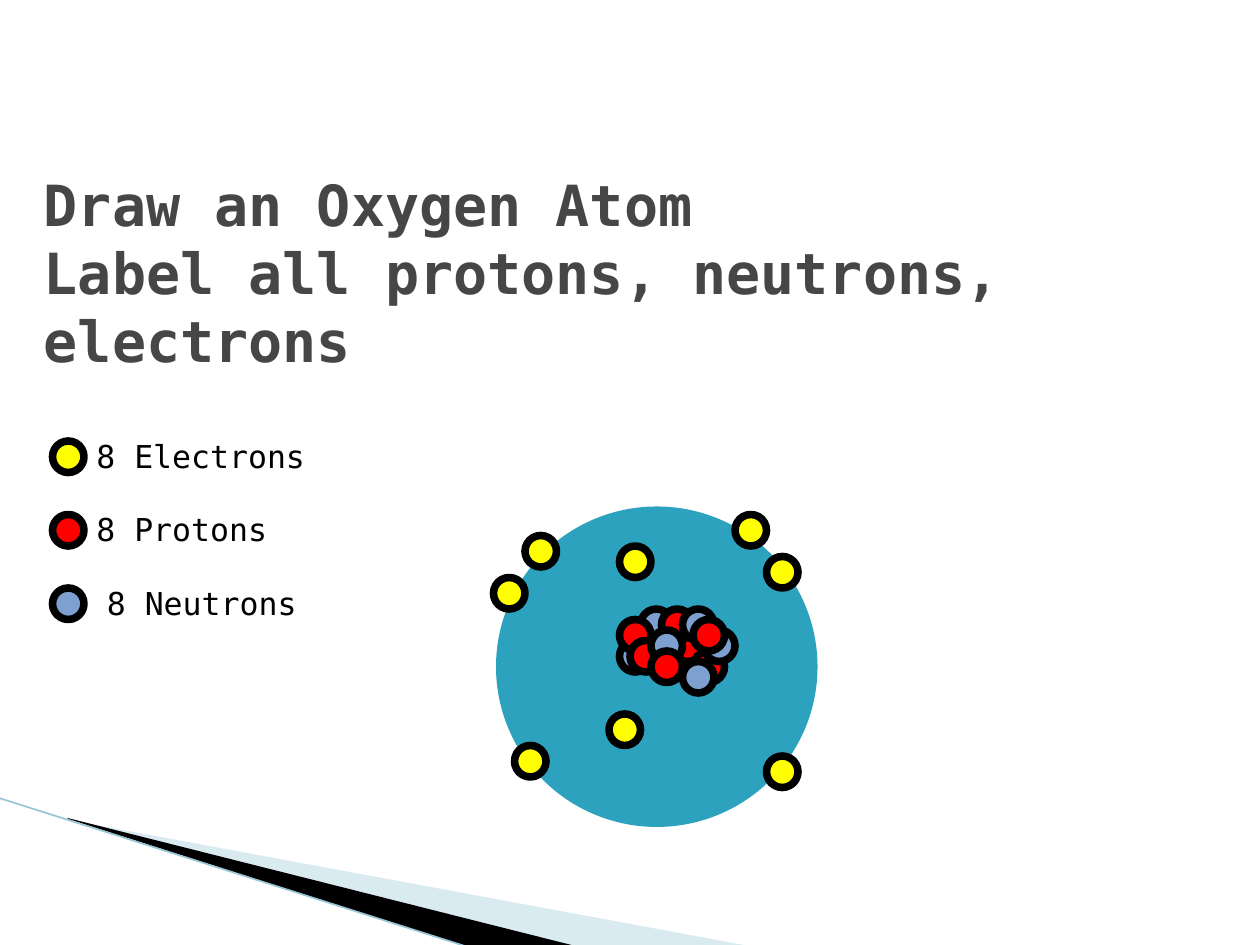
"""Build a slide that shows an oxygen atom with its protons, neutrons and electrons."""
from typing import NamedTuple

from lxml import etree
from pptx import Presentation
from pptx import util as u
from pptx.dml.color import RGBColor
from pptx.enum import shapes, text
from pptx.oxml.ns import qn

PX = u.Inches(1) // 120
FONT = "DejaVu Sans Mono"
DIAMETER = 30
OUTLINE = 4.33
BLACK, GREY, TEAL, PALE = "000000", "464646", "2DA2BF", "A0CBDC"
ELECTRON, PROTON, NEUTRON = "FFFF00", "FF0000", "7DA0D0"


class Particle(NamedTuple):
    kind: str
    left: int
    top: int


class Entry(NamedTuple):
    kind: str
    label: str
    dot_top: int
    label_left: int


class Wedge(NamedTuple):
    color: str
    opacity: int
    points: list[tuple[int, int]]


NUCLEUS = [
    Particle(NEUTRON, 590, 610), Particle(NEUTRON, 610, 580),
    Particle(PROTON, 640, 600), Particle(PROTON, 630, 580),
    Particle(PROTON, 590, 590), Particle(PROTON, 660, 620),
    Particle(PROTON, 600, 610), Particle(NEUTRON, 650, 630),
    Particle(NEUTRON, 650, 580), Particle(NEUTRON, 670, 600),
    Particle(NEUTRON, 620, 600), Particle(PROTON, 620, 620),
    Particle(PROTON, 660, 590),
]
SHELL = [Particle(ELECTRON, left, top) for left, top in [
    (730, 720), (470, 550), (730, 530), (700, 490),
    (490, 710), (500, 510), (590, 520), (580, 680)]]
LEGEND = [
    Entry(ELECTRON, "8 Electrons", 420, 80),
    Entry(PROTON, "8 Protons", 490, 80),
    Entry(NEUTRON, "8 Neutrons", 560, 90),
]
WEDGES = [
    Wedge(PALE, 40, [(66, 781), (714, 901), (547, 901), (66, 780)]),
    Wedge(BLACK, 100, [(64, 779), (548, 901), (446, 902), (65, 780)]),
]


def rgb(color: str) -> RGBColor:
    """Turn a hex string into a colour."""
    return RGBColor.from_string(color)


def draw_wedge(slide, wedge: Wedge) -> None:
    """Draw one wedge of the corner decoration."""
    builder = slide.shapes.build_freeform(*wedge.points[0], scale=PX)
    builder.add_line_segments(wedge.points[1:], close=True)
    shape = builder.convert_to_shape()
    shape.shadow.inherit = False
    shape.fill.solid()
    shape.fill.fore_color.rgb = rgb(wedge.color)
    shape.line.fill.background()
    if wedge.opacity < 100:
        color = shape.fill._xPr.find(qn("a:solidFill"))[0]
        etree.SubElement(color, qn("a:alpha"), val=str(wedge.opacity * 1000))


def draw_edge(slide, start: tuple[int, int], end: tuple[int, int], color: str) -> None:
    """Draw the thin line along the corner decoration."""
    edge = slide.shapes.add_connector(
        shapes.MSO_CONNECTOR.STRAIGHT, *(PX * value for value in start + end))
    edge.line.color.rgb = rgb(color)
    edge.line.width = u.Pt(0.95)
    etree.SubElement(edge._element.spPr, qn("a:effectLst"))


def draw_circle(slide, left: int, top: int, width: int, height: int,
                fill: str, outline: str) -> None:
    """Draw a filled circle with a thick outline."""
    circle = slide.shapes.add_shape(
        shapes.MSO_SHAPE.OVAL, *(PX * value for value in (left, top, width, height)))
    circle.shadow.inherit = False
    circle.fill.solid()
    circle.fill.fore_color.rgb = rgb(fill)
    circle.line.color.rgb = rgb(outline)
    circle.line.width = u.Pt(OUTLINE)


def draw_particle(slide, particle: Particle) -> None:
    """Draw one electron, proton or neutron."""
    draw_circle(slide, particle.left, particle.top, DIAMETER, DIAMETER,
                particle.kind, BLACK)


def draw_text(slide, box: tuple[int, int, int, int], lines: list[str], size: float,
              color: str, bold: bool = False,
              anchor: text.MSO_ANCHOR = text.MSO_ANCHOR.TOP) -> None:
    """Write lines of text as one paragraph in a box."""
    frame = slide.shapes.add_textbox(*(PX * value for value in box)).text_frame
    frame.word_wrap = True
    frame.vertical_anchor = anchor
    paragraph = frame.paragraphs[0]
    for index, line in enumerate(lines):
        if index:
            paragraph.add_line_break()
        run = paragraph.add_run()
        run.text = line
        run.font.name = FONT
        run.font.size = u.Pt(size)
        run.font.bold = bold
        run.font.color.rgb = rgb(color)


def main() -> None:
    """Build and save the slide."""
    deck = Presentation()
    deck.slide_width, deck.slide_height = 1200 * PX, 900 * PX
    slide = deck.slides.add_slide(deck.slide_layouts[6])

    for wedge in WEDGES:
        draw_wedge(slide, wedge)
    draw_edge(slide, (-1, 760), (446, 902), "97C5D8")

    draw_text(slide, (30, 160, 1080, 198),
              ["Draw an Oxygen Atom", "Label all protons, neutrons, electrons"],
              32.4, GREY, bold=True, anchor=text.MSO_ANCHOR.MIDDLE)

    draw_circle(slide, 476, 486, 299, 298, TEAL, TEAL)
    for particle in NUCLEUS + SHELL:
        draw_particle(slide, particle)

    for entry in LEGEND:
        draw_particle(slide, Particle(entry.kind, 50, entry.dot_top))
        draw_text(slide, (entry.label_left, entry.dot_top - 10, 250, 48),
                  [entry.label], 18, BLACK)

    deck.save("out.pptx")


if __name__ == "__main__":
    main()
